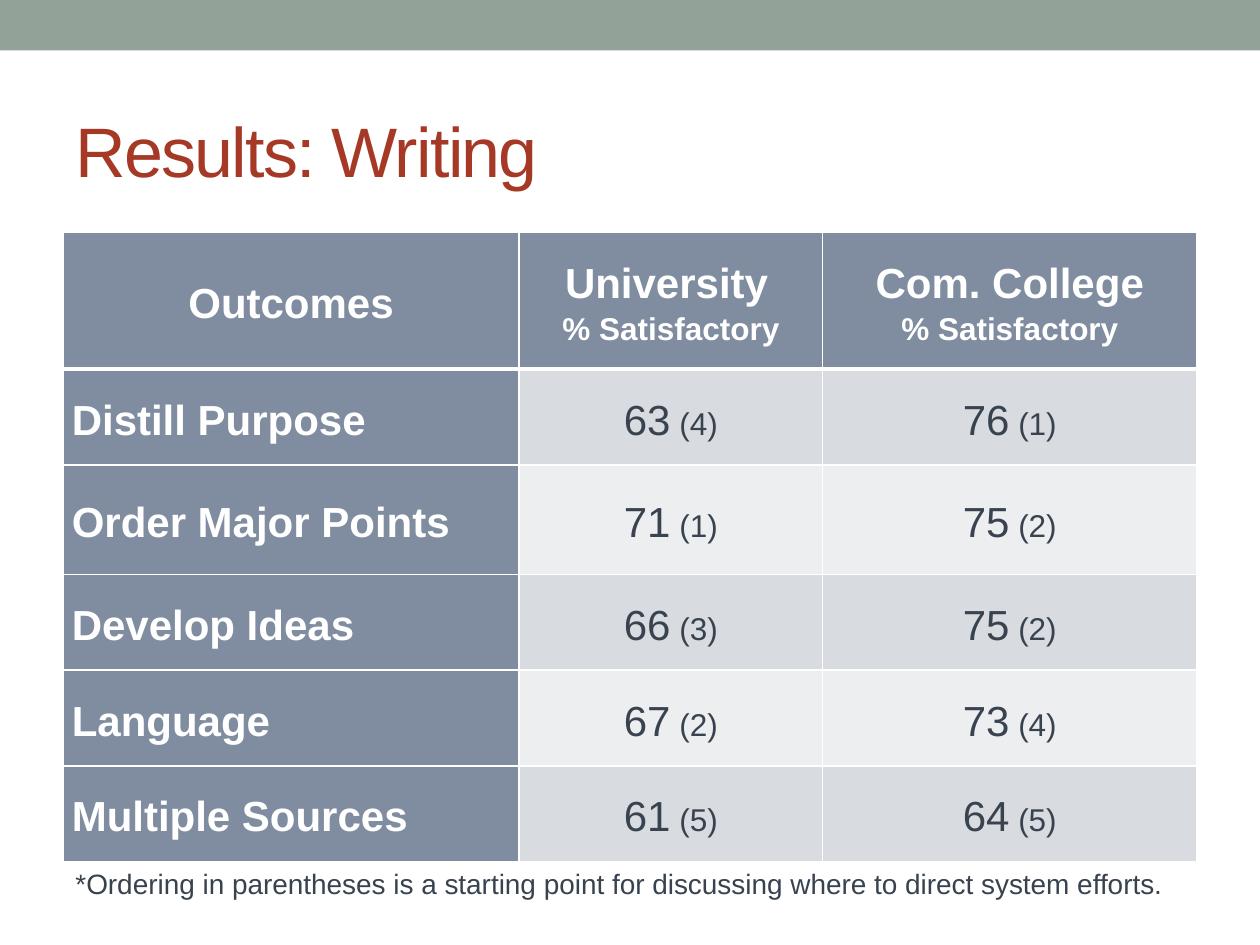
from dataclasses import dataclass

from lxml.etree import SubElement
from pptx import Presentation
from pptx.dml.color import RGBColor
from pptx.enum.shapes import MSO_SHAPE as Shape
from pptx.enum.text import MSO_ANCHOR as Anchor, MSO_AUTO_SIZE as AutoSize, PP_ALIGN as Align
from pptx.oxml.ns import qn
from pptx.util import Inches, Pt

WIDTH, HEIGHT = Inches(10), Inches(7.5)
MARGIN = 0.05  # share of the slide's width
FONT = "Arial"
WHITE, SAGE, RUST, SLATE, INK = "FFFFFF", "93A299", "A53926", "808DA0", "394350"
BANDS = ("D8DBDF", "EDEEF0")
LARGE, SMALL = 24, 18
COLUMN_WIDTHS = (3.62, 2.41, 2.97)
ROW_HEIGHTS = (1.09, 0.76, 0.87, 0.76, 0.76, 0.76)


@dataclass(frozen=True)
class Piece:
    text: str
    size: int = LARGE


@dataclass(frozen=True)
class Score:
    percent: int
    rank: int

    def pieces(self) -> list[Piece]:
        return [Piece(str(self.percent)), Piece(f" ({self.rank})", SMALL)]


@dataclass(frozen=True)
class Outcome:
    name: str
    university: Score
    college: Score


OUTCOMES = (
    Outcome("Distill Purpose", Score(63, 4), Score(76, 1)),
    Outcome("Order Major Points", Score(71, 1), Score(75, 2)),
    Outcome("Develop Ideas", Score(66, 3), Score(75, 2)),
    Outcome("Language", Score(67, 2), Score(73, 4)),
    Outcome("Multiple Sources", Score(61, 5), Score(64, 5)),
)


def color(value: str) -> RGBColor:
    return RGBColor.from_string(value)


def style_font(font, size: int, value: str, bold: bool = False) -> None:
    font.name, font.size, font.bold = FONT, Pt(size), bold
    font.color.rgb = color(value)


def set_borders(cell, top: int, bottom: int) -> None:
    """Draw white cell borders; top and bottom are widths in points."""
    properties = cell._tc.get_or_add_tcPr()
    for side, width in (("L", 1), ("R", 1), ("T", top), ("B", bottom)):
        line = SubElement(properties, qn(f"a:ln{side}"), w=str(Pt(width)))
        SubElement(SubElement(line, qn("a:solidFill")), qn("a:srgbClr"), val=WHITE)


def fill_cell(table, row: int, column: int, lines: list[list[Piece]]) -> None:
    cell = table.cell(row, column)
    heading = row == 0 or column == 0
    set_borders(cell, top=3 if row == 1 else 1, bottom=3 if row == 0 else 1)
    cell.fill.solid()
    cell.fill.fore_color.rgb = color(SLATE if heading else BANDS[(row - 1) % 2])
    cell.vertical_anchor = Anchor.MIDDLE
    cell.margin_left = cell.margin_right = Inches(0.07)
    cell.margin_top = cell.margin_bottom = 0
    for index, pieces in enumerate(lines):
        frame = cell.text_frame
        paragraph = frame.add_paragraph() if index else frame.paragraphs[0]
        paragraph.line_spacing = 1.15
        paragraph.alignment = Align.LEFT if row and column == 0 else Align.CENTER
        for piece in pieces:
            run = paragraph.add_run()
            run.text = piece.text
            style_font(run.font, piece.size, WHITE if heading else INK, heading)


def add_results_table(slide) -> None:
    frame = slide.shapes.add_table(
        len(ROW_HEIGHTS), len(COLUMN_WIDTHS), int(WIDTH * MARGIN), Inches(1.84),
        Inches(sum(COLUMN_WIDTHS)), Inches(sum(ROW_HEIGHTS)))
    table = frame.table
    for column, width in zip(table.columns, COLUMN_WIDTHS):
        column.width = Inches(width)
    for row, height in zip(table.rows, ROW_HEIGHTS):
        row.height = Inches(height)

    unit = [Piece("% Satisfactory", SMALL)]
    rows = [[[[Piece("Outcomes")]],
             [[Piece("University"), Piece(" ", SMALL)], unit],
             [[Piece("Com. College")], unit]]]
    rows += [[[[Piece(outcome.name)]], [outcome.university.pieces()],
              [outcome.college.pieces()]] for outcome in OUTCOMES]
    for row, cells in enumerate(rows):
        for column, lines in enumerate(cells):
            fill_cell(table, row, column, lines)


def add_title(slide, text: str) -> None:
    title = slide.shapes.title
    title.left, title.top = int(WIDTH * MARGIN), Inches(0.75)
    title.width, title.height = int(WIDTH * (1 - 2 * MARGIN)), Inches(0.87)
    title.text_frame.text = text
    title.text_frame.vertical_anchor = Anchor.MIDDLE
    paragraph = title.text_frame.paragraphs[0]
    paragraph.alignment = Align.LEFT
    run = paragraph.runs[0]
    style_font(run.font, 40, RUST)
    run.font._element.set("spc", "-100")


def add_footnote(slide, text: str) -> None:
    box = slide.shapes.add_textbox(int(WIDTH * MARGIN), Inches(6.83), Inches(9.08), Inches(0.37))
    frame = box.text_frame
    frame.word_wrap = True
    frame.auto_size = AutoSize.SHAPE_TO_FIT_TEXT
    frame.text = text
    style_font(frame.paragraphs[0].runs[0].font, 16, INK)


def main() -> None:
    presentation = Presentation()
    presentation.slide_width, presentation.slide_height = WIDTH, HEIGHT
    slide = presentation.slides.add_slide(presentation.slide_layouts[5])

    # Top band
    band = slide.shapes.add_shape(Shape.RECTANGLE, 0, 0, WIDTH, Inches(0.4))
    band.shadow.inherit = False
    band.fill.solid()
    band.fill.fore_color.rgb = color(SAGE)
    band.line.fill.background()

    # Title, results and footnote
    add_title(slide, "Results: Writing")
    add_results_table(slide)
    add_footnote(slide, "*Ordering in parentheses is a starting point for discussing "
                        "where to direct system efforts.")
    presentation.save("out.pptx")


if __name__ == "__main__":
    main()
